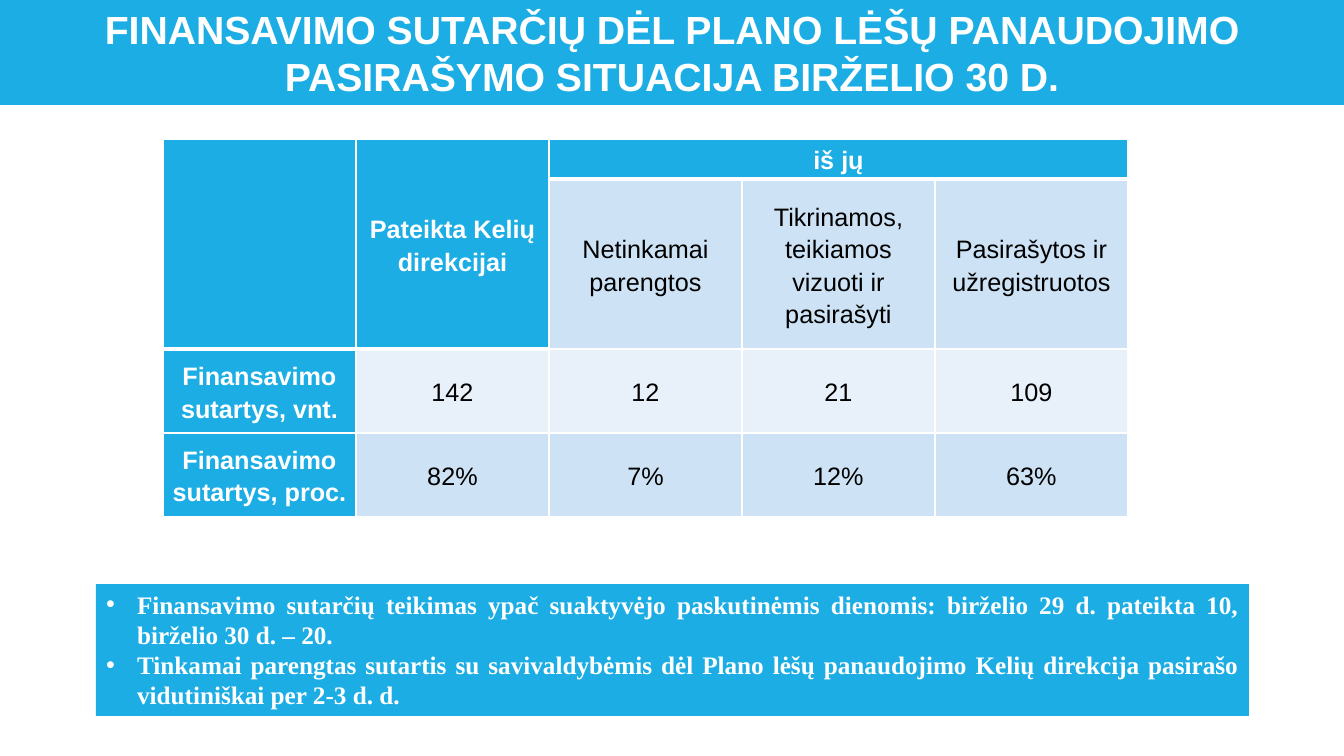
from lxml import etree
from pptx import Presentation
from pptx import util as u
from pptx.dml.color import RGBColor
from pptx.enum import text
from pptx.oxml import ns

BLUE = RGBColor(0x1C, 0xAD, 0xE4)
MID = RGBColor(0xCD, 0xE3, 0xF5)
PALE = RGBColor(0xE8, 0xF1, 0xFA)
WHITE = RGBColor(0xFF, 0xFF, 0xFF)
BLACK = RGBColor(0, 0, 0)
SCALE = 914400 / 100.8

TITLE = "FINANSAVIMO SUTARČIŲ DĖL PLANO LĖŠŲ PANAUDOJIMO PASIRAŠYMO SITUACIJA BIRŽELIO 30 D."
NOTES = [
    "Finansavimo sutarčių teikimas ypač suaktyvėjo paskutinėmis dienomis: "
    "birželio 29 d. pateikta 10, birželio 30 d. – 20. ",
    "Tinkamai parengtas sutartis su savivaldybėmis dėl Plano lėšų panaudojimo "
    "Kelių direkcija pasirašo vidutiniškai per 2-3 d. d. ",
]
ROWS = [
    ["", "Pateikta Kelių direkcijai", "iš jų", "", ""],
    ["", "", "Netinkamai parengtos", "Tikrinamos, teikiamos vizuoti ir pasirašyti",
     "Pasirašytos ir užregistruotos"],
    ["Finansavimo sutartys, vnt.", "142", "12", "21", "109"],
    ["Finansavimo sutartys, proc.", "82%", "7%", "12%", "63%"],
]
MERGES = [(0, 0, 1, 0), (0, 1, 1, 1), (0, 2, 0, 4)]


def px(n):
    return u.Emu(round(n * SCALE))


class Deck:
    """Holds the style and the current slide."""

    def __init__(self, wide, high):
        self.prs = Presentation()
        self.prs.slide_width, self.prs.slide_height = px(wide), px(high)
        self.slide = self.prs.slides.add_slide(self.prs.slide_layouts[1])

    def label(self, para, words, size, font, color, bold, align):
        para.alignment = align
        para.space_before = u.Pt(0)
        run = para.add_run()
        run.text = words
        run.font.size, run.font.name = u.Pt(size), font
        run.font.bold, run.font.color.rgb = bold, color

    def panel(self, shape, x, y, w, h, anchor):
        shape.left, shape.top, shape.width, shape.height = map(px, (x, y, w, h))
        shape.fill.solid()
        shape.fill.fore_color.rgb = BLUE
        frame = shape.text_frame
        frame.word_wrap, frame.vertical_anchor = True, anchor
        frame.auto_size = text.MSO_AUTO_SIZE.NONE
        return frame

    def title(self, words, *box):
        frame = self.panel(self.slide.shapes.title, *box, text.MSO_ANCHOR.MIDDLE)
        self.label(frame.paragraphs[0], words, 28, "Arial", WHITE, True, text.PP_ALIGN.CENTER)

    def bullets(self, items, *box):
        frame = self.panel(self.slide.placeholders[1], *box, text.MSO_ANCHOR.TOP)
        for n, item in enumerate(items):
            para = frame.add_paragraph() if n else frame.paragraphs[0]
            self.label(para, item, 18, "Times New Roman", WHITE, True, text.PP_ALIGN.JUSTIFY)
            props = para._p.get_or_add_pPr()
            props.set("marL", str(px(31)))
            props.set("indent", str(-px(31)))
            etree.SubElement(props, ns.qn("a:buFont"), typeface="Arial")
            etree.SubElement(props, ns.qn("a:buChar"), char="•")

    def border(self, cell, side, width):
        line = etree.SubElement(cell._tc.get_or_add_tcPr(), ns.qn("a:ln" + side),
                                w=str(u.Pt(width)))
        fill = etree.SubElement(line, ns.qn("a:solidFill"))
        etree.SubElement(fill, ns.qn("a:srgbClr"), val=str(WHITE))

    def cell(self, cell, words, fill, bold, top, base):
        for side, width in (("L", 1), ("R", 1), ("T", top), ("B", base)):
            self.border(cell, side, width)
        cell.fill.solid()
        cell.fill.fore_color.rgb = fill
        cell.vertical_anchor = text.MSO_ANCHOR.MIDDLE
        cell.margin_left = cell.margin_right = px(7)
        cell.margin_top = cell.margin_bottom = 0
        if words:
            para = cell.text_frame.paragraphs[0]
            para.line_spacing = 1.15
            self.label(para, words, 18, "Arial", WHITE if bold else BLACK, bold,
                       text.PP_ALIGN.CENTER)

    def table(self, rows, merges, x, y, wide, highs):
        cols = len(rows[0])
        grid = self.slide.shapes.add_table(len(rows), cols, px(x), px(y),
                                           px(wide * cols), px(sum(highs))).table
        grid.first_row = grid.horz_banding = False
        for col in grid.columns:
            col.width = px(wide)
        for row, high in zip(grid.rows, highs):
            row.height = px(high)
        for r, row in enumerate(rows):
            for c, words in enumerate(row):
                seam = 2 if c < 2 else 1
                head = r < seam
                bold = head or c == 0
                fill = BLUE if bold else PALE if r == 2 else MID
                self.cell(grid.cell(r, c), words, fill, bold,
                          3 if r == seam else 1, 3 if head else 1)
        for r, c, last, end in merges:
            grid.cell(r, c).merge(grid.cell(last, end))


def main():
    deck = Deck(1344, 756)
    deck.table(ROWS, MERGES, 163, 139, 193, [40, 170, 84, 84])
    deck.title(TITLE, 0, 0, 1344, 105)
    deck.bullets(NOTES, 96, 584, 1153, 132)
    deck.prs.save("out.pptx")


if __name__ == "__main__":
    main()
